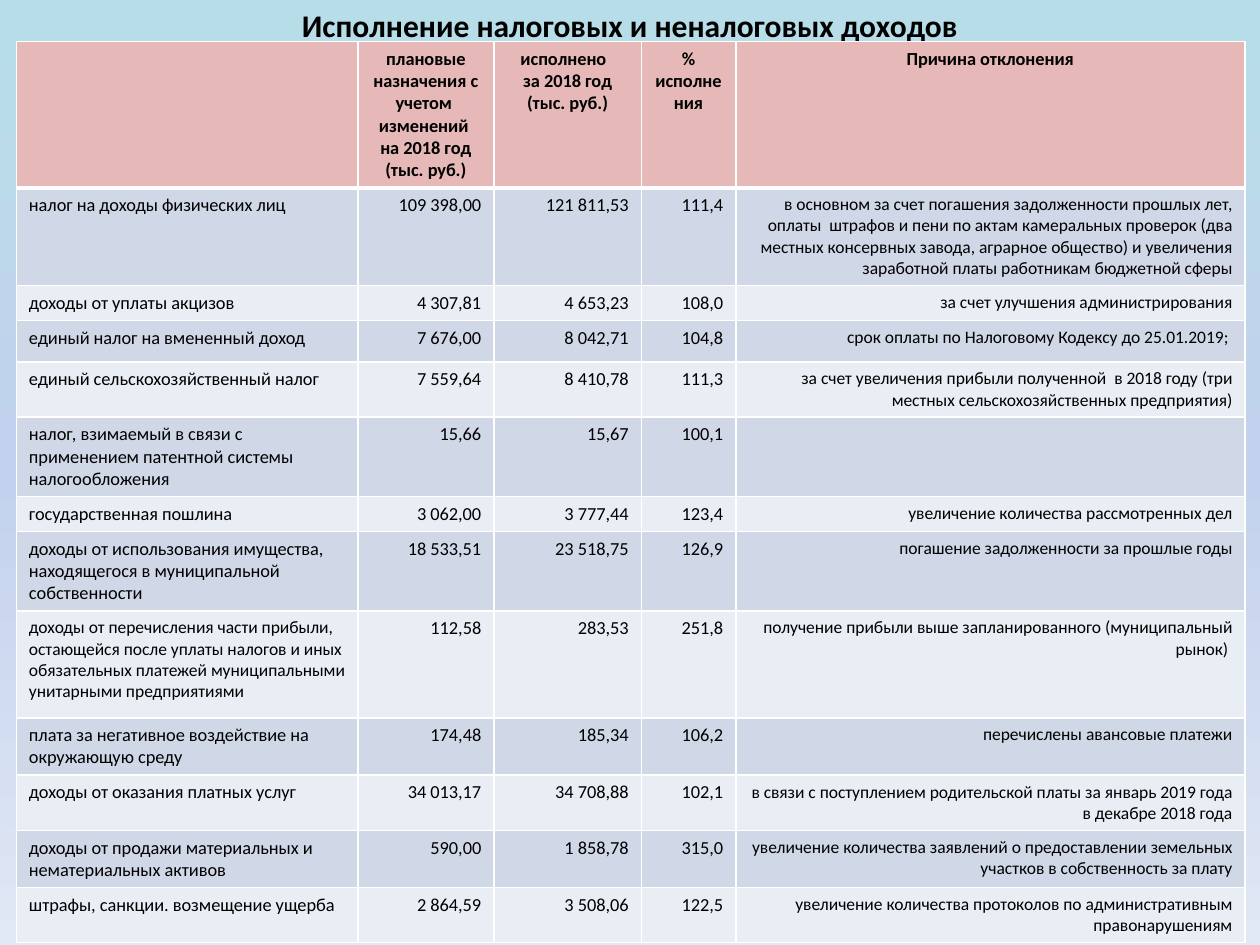
from copy import deepcopy
from dataclasses import dataclass

from lxml import etree
from pptx import Presentation
from pptx.dml.color import RGBColor
from pptx.enum import text
from pptx.oxml import ns
from pptx.util import Inches, Pt


@dataclass(frozen=True)
class Theme:
    font: str = "Calibri"
    ink: str = "000000"
    line: str = "FFFFFF"
    head: str = "E6B9B8"
    bands: tuple = ("D0D8E8", "E9EDF4")
    sky: tuple = ((0, "B7DEE8"), (0.5, "C2D1ED"), (1, "E1E8F5"))
    title: float = 18
    body: float = 10.5
    small: float = 10
    thin: float = 1
    thick: float = 3


@dataclass(frozen=True)
class Row:
    high: float
    name: str
    plan: str
    fact: str
    rate: str
    cause: str
    size: float = Theme.body


T = Theme()
LEFT, CENTER, RIGHT = (
    text.PP_ALIGN.LEFT, text.PP_ALIGN.CENTER, text.PP_ALIGN.RIGHT)
WIDTHS = (2.71, 1.08, 1.17, 0.75, 4.04)
HEAD_HIGH = 1.14
HEADS = (
    (),
    ("плановые назначения с учетом  изменений ", "на 2018 год (тыс. руб.)"),
    ("исполнено  ", "за 2018 год (тыс. руб.)"),
    ("% исполнения",),
    ("Причина отклонения",),
)
ROWS = (
    Row(0.76, "налог на доходы физических лиц",
        "109 398,00", "121 811,53", "111,4",
        "в основном за счет погашения задолженности прошлых лет, "
        "оплаты  штрафов и пени по актам камеральных проверок (два "
        "местных консервных завода, аграрное общество) и увеличения "
        "заработной платы работникам бюджетной сферы"),
    Row(0.27, "доходы от уплаты акцизов", "4 307,81", "4 653,23", "108,0",
        "за счет улучшения администрирования"),
    Row(0.33, "единый налог на вмененный доход",
        "7 676,00", "8 042,71", "104,8",
        "срок оплаты по Налоговому Кодексу до 25.01.2019; "),
    Row(0.43, "единый сельскохозяйственный налог",
        "7 559,64", "8 410,78", "111,3",
        "за счет увеличения прибыли полученной  в 2018 году (три "
        "местных сельскохозяйственных предприятия)"),
    Row(0.62, "налог, взимаемый в связи с применением патентной системы "
        "налогообложения", "15,66", "15,67", "100,1", ""),
    Row(0.27, "государственная пошлина", "3 062,00", "3 777,44", "123,4",
        "увеличение количества рассмотренных дел"),
    Row(0.62, "доходы от использования имущества, находящегося в "
        "муниципальной собственности", "18 533,51", "23 518,75", "126,9",
        "погашение задолженности за прошлые годы"),
    Row(0.85, "доходы от перечисления части прибыли, остающейся после "
        "уплаты налогов и иных обязательных платежей муниципальными "
        "унитарными предприятиями", "112,58", "283,53", "251,8",
        "получение прибыли выше запланированного (муниципальный рынок) ",
        T.small),
    Row(0.38, "плата за негативное воздействие на окружающую среду",
        "174,48", "185,34", "106,2", "перечислены авансовые платежи"),
    Row(0.43, "доходы от оказания платных услуг",
        "34 013,17", "34 708,88", "102,1",
        "в связи с поступлением родительской платы за январь 2019 года "
        "в декабре 2018 года"),
    Row(0.45, "доходы от продажи материальных и нематериальных активов",
        "590,00", "1 858,78", "315,0",
        "увеличение количества заявлений о предоставлении земельных "
        "участков в собственность за плату"),
    Row(0.43, "штрафы, санкции. возмещение ущерба",
        "2 864,59", "3 508,06", "122,5",
        "увеличение количества протоколов по административным "
        "правонарушениям"),
)


def write(frame, lines: tuple, size: float, align, bold: bool = False) -> None:
    for i, line in enumerate(lines):
        para = frame.paragraphs[0] if i == 0 else frame.add_paragraph()
        para.alignment = align
        run = para.add_run()
        run.text = line
        font = run.font
        font.name, font.size, font.bold = T.font, Pt(size), bold
        font.color.rgb = RGBColor.from_string(T.ink)


def style(cell, fill: str, top: float, bottom: float) -> None:
    """Set borders first, since they precede the fill in the cell's XML."""
    props = cell._tc.get_or_add_tcPr()
    sides = {"lnL": T.thin, "lnR": T.thin, "lnT": top, "lnB": bottom}
    for side, width in sides.items():
        line = etree.SubElement(props, ns.qn(f"a:{side}"), w=str(Pt(width)))
        solid = etree.SubElement(line, ns.qn("a:solidFill"))
        etree.SubElement(solid, ns.qn("a:srgbClr"), val=T.line)
    cell.fill.solid()
    cell.fill.fore_color.rgb = RGBColor.from_string(fill)


def paint(slide) -> None:
    """Fill the background with a three-stop gradient from top to bottom."""
    fill = slide.background.fill
    fill.gradient()
    fill.gradient_angle = 270
    stops = next(slide.element.iter(ns.qn("a:gsLst")))
    stops.insert(1, deepcopy(stops[0]))
    for stop, (place, color) in zip(fill.gradient_stops, T.sky):
        stop.position = place
        stop.color.rgb = RGBColor.from_string(color)


def add_title(slide) -> None:
    title = slide.shapes.title
    title.left, title.top = Inches(0), Inches(0)
    title.width, title.height = Inches(10), Inches(0.4)
    frame = title.text_frame
    frame.word_wrap = True
    frame.vertical_anchor = text.MSO_ANCHOR.TOP
    write(frame, ("Исполнение налоговых и неналоговых доходов",),
          T.title, CENTER, True)


def add_grid(slide) -> None:
    highs = (HEAD_HIGH, *(row.high for row in ROWS))
    grid = slide.shapes.add_table(
        len(highs), len(WIDTHS), Inches(0.13), Inches(0.33),
        Inches(sum(WIDTHS)), Inches(sum(highs))).table
    for col, width in zip(grid.columns, WIDTHS):
        col.width = Inches(width)
    for line, high in zip(grid.rows, highs):
        line.height = Inches(high)

    for c, lines in enumerate(HEADS):
        cell = grid.cell(0, c)
        style(cell, T.head, T.thin, T.thick)
        write(cell.text_frame, lines, T.body, CENTER, True)

    for r, row in enumerate(ROWS):
        parts = (
            (row.name, row.size, LEFT),
            (row.plan, T.body, RIGHT),
            (row.fact, T.body, RIGHT),
            (row.rate, T.body, RIGHT),
            (row.cause, T.small, RIGHT),
        )
        for c, (words, size, align) in enumerate(parts):
            cell = grid.cell(r + 1, c)
            style(cell, T.bands[r % 2], T.thin if r else T.thick, T.thin)
            if words:
                write(cell.text_frame, (words,), size, align)


def main() -> None:
    deck = Presentation()
    deck.slide_width, deck.slide_height = Inches(10), Inches(7.5)
    slide = deck.slides.add_slide(deck.slide_layouts[5])
    paint(slide)
    add_title(slide)
    add_grid(slide)
    deck.save("out.pptx")


if __name__ == "__main__":
    main()
